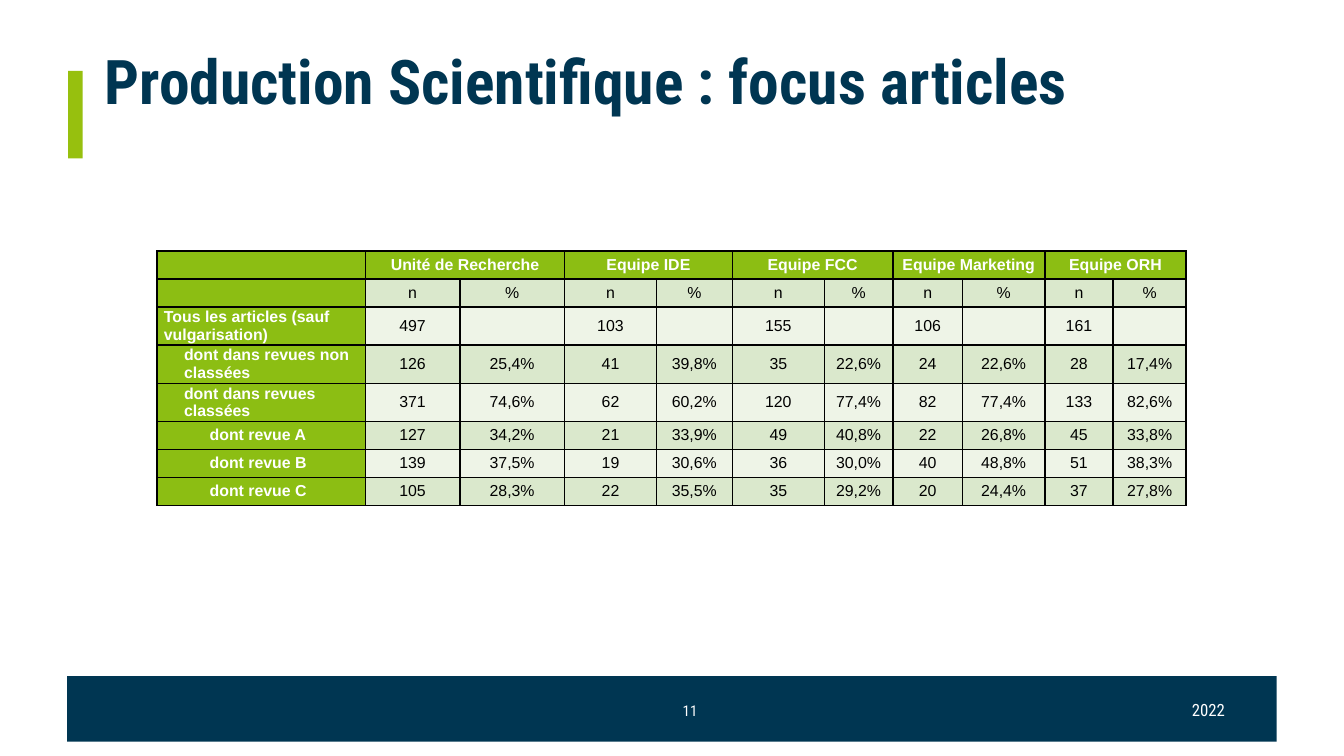
"""Build the slide on scientific production, with its table of articles by team."""
from lxml.etree import SubElement
from pptx import Presentation
from pptx.dml.color import RGBColor
from pptx.enum.shapes import MSO_SHAPE
from pptx.enum.text import MSO_ANCHOR, PP_ALIGN
from pptx.oxml.ns import qn
from pptx.util import Pt

COLORS = {"navy": "003652", "lime": "97C00E", "green": "8CBE13", "mid": "DAE8CC",
          "pale": "EEF4E7", "white": "FFFFFF", "black": "000000"}
HEAD = "Roboto Condensed"
BARS = [((36, 362.2, 648, 35.2), "navy"), ((36.5, 38, 7.8, 46.8), "lime")]
TEXTS = [
    ("11", (343.4, 370.1, 52.6, 21.6), PP_ALIGN.CENTER, MSO_ANCHOR.MIDDLE, 1,
     (7.2, 3.6), {"size": Pt(8), "name": HEAD, "bold": False}, "white"),
    ("2022", (631.4, 371.5, 88, 21.6), PP_ALIGN.LEFT, MSO_ANCHOR.TOP, 1,
     (7.2, 3.6), {"size": Pt(9), "name": HEAD, "bold": False}, "white"),
    ("Production Scientifique : focus articles", (49, 27.4, 630, 66.2),
     PP_ALIGN.LEFT, MSO_ANCHOR.TOP, 0.9,
     (7.2, 0), {"size": Pt(33), "name": HEAD, "bold": True}, "navy"),
]
TEAMS = ["Unité de Recherche", "Equipe IDE", "Equipe FCC", "Equipe Marketing", "Equipe ORH"]
ROWS = [
    ("Tous les articles (sauf vulgarisation)", 0,
     ["497", "", "103", "", "155", "", "106", "", "161", ""]),
    ("dont dans revues non classées", 1,
     ["126", "25,4%", "41", "39,8%", "35", "22,6%", "24", "22,6%", "28", "17,4%"]),
    ("dont dans revues classées", 1,
     ["371", "74,6%", "62", "60,2%", "120", "77,4%", "82", "77,4%", "133", "82,6%"]),
    ("dont revue A", 2,
     ["127", "34,2%", "21", "33,9%", "49", "40,8%", "22", "26,8%", "45", "33,8%"]),
    ("dont revue B", 2,
     ["139", "37,5%", "19", "30,6%", "36", "30,0%", "40", "48,8%", "51", "38,3%"]),
    ("dont revue C", 2,
     ["105", "28,3%", "22", "35,5%", "35", "29,2%", "20", "24,4%", "37", "27,8%"]),
]
INDENTS = [(0, 0), (10.8, 0), (38.9, -14.4)]
WIDTHS = [111.6, 50.5, 56.2, 49.2, 40.7, 49.3, 36.7, 37.4, 44, 36.7, 39.1]
LEFT, TOP, TALL = 84.2, 134.5, 15


def tint(name):
    return RGBColor.from_string(COLORS[name])


def style(font, look, color):
    for key, value in look.items():
        setattr(font, key, value)
    font.color.rgb = tint(color)


def add_bar(slide, place, color):
    bar = slide.shapes.add_shape(MSO_SHAPE.RECTANGLE, *map(Pt, place))
    bar.shadow.inherit = False
    bar.fill.solid()
    bar.fill.fore_color.rgb = tint(color)
    bar.line.fill.background()


def add_text(slide, text, place, align, anchor, space, inset, look, color):
    frame = slide.shapes.add_textbox(*map(Pt, place)).text_frame
    frame.word_wrap = True
    frame.vertical_anchor = anchor
    frame.margin_left = frame.margin_right = Pt(inset[0])
    frame.margin_top = frame.margin_bottom = Pt(inset[1])
    para = frame.paragraphs[0]
    para.alignment, para.line_spacing = align, space
    run = para.add_run()
    run.text = text
    style(run.font, look, color)


def add_edges(cell):
    props = cell._tc.get_or_add_tcPr()
    for side in ("lnL", "lnR", "lnT", "lnB"):
        edge = SubElement(props, qn(f"a:{side}"), w=str(Pt(1)))
        fill = SubElement(edge, qn("a:solidFill"))
        SubElement(fill, qn("a:srgbClr"), val=COLORS["black"])


def fill_cell(cell, text, back, strong, level):
    add_edges(cell)
    cell.fill.solid()
    cell.fill.fore_color.rgb = tint(back)
    cell.vertical_anchor = MSO_ANCHOR.MIDDLE
    cell.margin_left = cell.margin_right = Pt(3.6)
    cell.margin_top = cell.margin_bottom = 0
    para = cell.text_frame.paragraphs[0]
    para.alignment = PP_ALIGN.CENTER if level is None else PP_ALIGN.LEFT
    if level:
        props = para._p.get_or_add_pPr()
        for key, value in zip(("marL", "indent"), INDENTS[level]):
            props.set(key, str(Pt(value)))
    if text:
        run = para.add_run()
        run.text = text
        look = {"size": Pt(8.5), "name": "Arial", "bold": strong}
        style(run.font, look, "white" if strong else "black")
    else:
        SubElement(para._p, qn("a:endParaRPr"), sz="850")


def add_grid(slide):
    names = [part for team in TEAMS for part in (team, "")]
    rows = [("", 0, names), ("", 0, ["n", "%"] * len(TEAMS))] + ROWS
    place = (LEFT, TOP, sum(WIDTHS), TALL * len(rows))
    table = slide.shapes.add_table(len(rows), len(WIDTHS), *map(Pt, place)).table
    table.first_row = table.horz_banding = False
    for col, width in zip(table.columns, WIDTHS):
        col.width = Pt(width)
    for r, (label, level, values) in enumerate(rows):
        table.rows[r].height = Pt(TALL)
        band = "mid" if r % 2 else "pale"
        for c, text in enumerate([label] + values):
            strong = r == 0 or c == 0
            fill_cell(table.cell(r, c), text, "green" if strong else band,
                      strong, None if c else level)
    for c in range(1, len(WIDTHS), 2):
        table.cell(0, c).merge(table.cell(0, c + 1))


def main():
    deck = Presentation()
    deck.slide_width, deck.slide_height = Pt(720), Pt(405)
    slide = deck.slides.add_slide(deck.slide_layouts[6])
    for bar in BARS:
        add_bar(slide, *bar)
    for text in TEXTS:
        add_text(slide, *text)
    add_grid(slide)
    deck.save("out.pptx")


if __name__ == "__main__":
    main()
